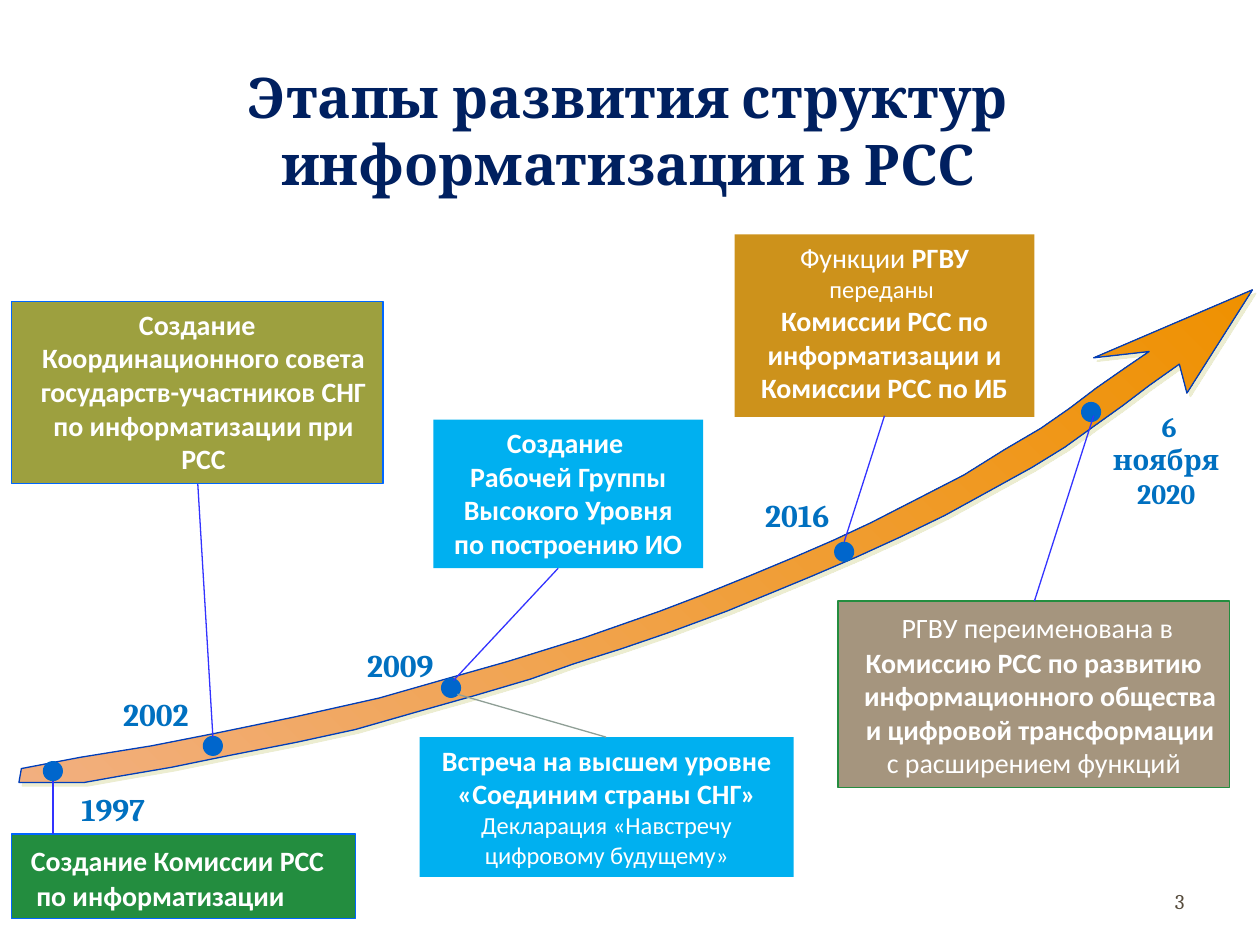
import pptx
import pptx.util
import pptx.dml.color
import pptx.enum.shapes
import pptx.enum.text
import pptx.oxml
import pptx.oxml.ns
import lxml.etree

Inches = pptx.util.Inches
Pt = pptx.util.Pt
ALIGN = pptx.enum.text.PP_ALIGN
ANCHOR = pptx.enum.text.MSO_ANCHOR
SHAPE = pptx.enum.shapes.MSO_SHAPE
WHITE, BLUE, DOT = "FFFFFF", "0070C0", "0066CC"

UPPER = [
    (0.17, 6.1), (0.64, 6.01), (1.2, 5.92), (1.71, 5.82), (2.34, 5.69),
    (3.01, 5.54), (3.5, 5.4), (4.03, 5.25), (4.64, 5.06), (5.24, 4.85),
    (5.58, 4.72), (5.95, 4.57), (6.31, 4.42), (6.61, 4.29), (6.91, 4.15),
    (7.3, 3.95), (7.65, 3.77), (7.97, 3.57), (8.26, 3.4), (8.49, 3.24),
    (8.7, 3.08), (8.93, 2.92), (9.12, 2.79),
]
HEAD = [(8.68, 2.84), (9.94, 2.3), (9.42, 3.12), (9.36, 2.89)]
LOWER = [
    (9.12, 3.06), (8.91, 3.22), (8.7, 3.37), (8.45, 3.55), (8.19, 3.71),
    (7.9, 3.87), (7.5, 4.09), (7.15, 4.26), (6.8, 4.42), (6.45, 4.57),
    (6.16, 4.69), (5.77, 4.85), (5.31, 5.02), (4.93, 5.15), (4.55, 5.27),
    (4.21, 5.39), (3.77, 5.52), (3.31, 5.65), (2.82, 5.79), (2.36, 5.89),
    (1.8, 6), (1.36, 6.09), (0.95, 6.16), (0.67, 6.21), (0.15, 6.21),
]

# Each box: place, fill, line, alignment, hanging indent, paragraphs of (text, size, bold)
BOXES = [
    ((0.09, 6.62, 2.73, 0.67), "238D3F", "0066FF", ALIGN.LEFT, 0.1,
     [[(" ", 18, True), ("Создание Комиссии РСС по информатизации", 16, True)]]),
    ((0.09, 2.39, 2.95, 1.45), "9DA03F", "0066FF", ALIGN.CENTER, 0.1,
     [[("Создание Координационного совета государств-участников СНГ "
        "по информатизации при РСС", 16, True)]]),
    ((6.65, 4.77, 3.11, 1.48), "A5957E", "238D3F", ALIGN.CENTER, 0.1,
     [[(" ", 18, False), ("РГВУ переименована в", 16, False)],
      [("Комиссию РСС по развитию информационного общества "
        "и цифровой трансформации ", 16, True)],
      [("с расширением функций", 16, False)]]),
    ((3.33, 5.85, 2.97, 1.11), "00B0F0", None, ALIGN.CENTER, 0,
     [[("Встреча на высшем уровне «Соединим страны СНГ»", 16, True)],
      [("Декларация «Навстречу цифровому будущему»", 14, False)]]),
    ((3.44, 3.33, 2.14, 1.18), "00B0F0", None, ALIGN.CENTER, 0,
     [[("Создание ", 16, True)],
      [("Рабочей Группы Высокого Уровня по построению ИО", 16, True)]]),
    ((5.83, 1.86, 2.38, 1.45), "CD921B", None, ALIGN.CENTER, 0,
     [[("Функции ", 16, False), ("РГВУ", 16, True)],
      [("переданы ", 14, False)],
      [("Комиссии РСС по информатизации и Комиссии РСС по ИБ", 16, True)]]),
]
DATES = [
    ((0.49, 6.22, 0.87, 0.4), "1997 ", 18),
    ((0.83, 5.47, 0.87, 0.4), "2002 ", 18),
    ((2.74, 5.08, 0.93, 0.4), "2009 ", 18),
    ((5.89, 3.89, 0.93, 0.4), "2016 ", 18),
    ((8.68, 3.2, 1.2, 0.64), "6 ноября \n2020 ", 16),
]
DOTS = [(0.34, 6.04), (1.61, 5.84), (3.5, 5.38), (6.62, 4.3), (8.58, 3.19)]
LINKS = [
    ((0.42, 6.2), (0.42, 6.62), "3333FF"),
    ((1.57, 3.84), (1.69, 5.85), "3333FF"),
    ((4.43, 4.51), (3.6, 5.4), "3333FF"),
    ((4.81, 5.85), (3.63, 5.51), "8F9F96"),
    ((7.02, 3.3), (6.7, 4.3), "3333FF"),
    ((8.68, 3.3), (8.21, 4.77), "3333FF"),
]


def color(code):
    """Turn a hex string into a colour."""
    return pptx.dml.color.RGBColor.from_string(code)


def style(run, font, size, code, bold=False):
    """Set the font of a run."""
    run.font.name = font
    run.font.size = Pt(size)
    run.font.bold = bold
    run.font.color.rgb = color(code)


def paint(shape, fill, line=None):
    """Fill and outline a shape without a shadow."""
    shape.shadow.inherit = False
    shape.fill.solid()
    shape.fill.fore_color.rgb = color(fill)
    if line:
        shape.line.color.rgb = color(line)
        shape.line.width = Pt(0.75)
    else:
        shape.line.fill.background()


def add_title(slide, text):
    """Place and format the title."""
    title = slide.shapes.title
    title.left, title.top, title.width, title.height = map(Inches, (0.47, 0.44, 9.03, 1.18))
    frame = title.text_frame
    frame.text = text
    frame.vertical_anchor = ANCHOR.MIDDLE
    frame.margin_left = frame.margin_right = Inches(0.04)
    frame.margin_top = frame.margin_bottom = Inches(0.04)
    frame.paragraphs[0].alignment = ALIGN.CENTER
    style(frame.paragraphs[0].runs[0], "Cambria", 32, "002060", True)


def add_arrow(slide):
    """Draw the rising arrow."""
    first, *rest = [(Inches(x), Inches(y)) for x, y in UPPER + HEAD + LOWER]
    pen = slide.shapes.build_freeform(*first)
    pen.add_line_segments(rest, close=True)
    arrow = pen.convert_to_shape()
    paint(arrow, "EF9100", "003EBA")
    arrow.fill.gradient()
    arrow.fill.gradient_angle = 45
    for stop, code in zip(arrow.fill.gradient_stops, ("F2AF7F", "EF9100")):
        stop.color.rgb = color(code)
    effects = arrow._element.spPr.find(pptx.oxml.ns.qn("a:effectLst"))
    shade = lxml.etree.SubElement(effects, pptx.oxml.ns.qn("a:outerShdw"),
                                  dist=str(Pt(2.8)), dir="2700000", algn="ctr")
    lxml.etree.SubElement(shade, pptx.oxml.ns.qn("a:srgbClr"), val="ECEDD1")


def add_box(slide, place, fill, line, align, hang, paras):
    """Add a filled box with mixed runs."""
    box = slide.shapes.add_shape(SHAPE.RECTANGLE, *map(Inches, place))
    paint(box, fill, line)
    frame = box.text_frame
    frame.word_wrap = True
    frame.vertical_anchor = ANCHOR.TOP
    for i, parts in enumerate(paras):
        para = frame.add_paragraph() if i else frame.paragraphs[0]
        para.alignment = align
        if hang:
            props = para._p.get_or_add_pPr()
            props.set("marL", str(Inches(hang)))
            props.set("indent", str(-Inches(hang)))
        for text, size, bold in parts:
            run = para.add_run()
            run.text = text
            style(run, "Calibri", size, WHITE, bold)


def add_label(slide, place, text, size, code=BLUE, bold=True, align=ALIGN.CENTER):
    """Add a plain text label."""
    frame = slide.shapes.add_textbox(*map(Inches, place)).text_frame
    frame.word_wrap = True
    frame.text = text
    for para in frame.paragraphs:
        para.alignment = align
        style(para.runs[0], "Cambria", size, code, bold)
    return frame


def add_dot(slide, left, top):
    """Add a milestone dot."""
    dot = slide.shapes.add_shape(SHAPE.OVAL, *map(Inches, (left, top, 0.16, 0.16)))
    paint(dot, DOT)


def add_link(slide, start, end, code):
    """Join a box and its dot."""
    link = slide.shapes.add_connector(
        pptx.enum.shapes.MSO_CONNECTOR.STRAIGHT, *map(Inches, start + end))
    link.line.color.rgb = color(code)
    link.line.width = Pt(0.75)
    lxml.etree.SubElement(link._element.spPr, pptx.oxml.ns.qn("a:effectLst"))


def main():
    """Build the slide."""
    deck = pptx.Presentation()
    deck.slide_width, deck.slide_height = Inches(10), Inches(7.5)
    slide = deck.slides.add_slide(deck.slide_layouts[5])
    add_title(slide, "Этапы развития структур информатизации в РСС")
    add_arrow(slide)
    for box in BOXES:
        add_box(slide, *box)
    for date in DATES:
        add_label(slide, *date)
    for dot in DOTS:
        add_dot(slide, *dot)
    for link in LINKS:
        add_link(slide, *link)
    page = add_label(slide, (7.17, 6.95, 2.33, 0.4), "3", 12, "564B3C", False, ALIGN.RIGHT)
    page.vertical_anchor = ANCHOR.MIDDLE
    deck.save("out.pptx")


if __name__ == "__main__":
    main()
